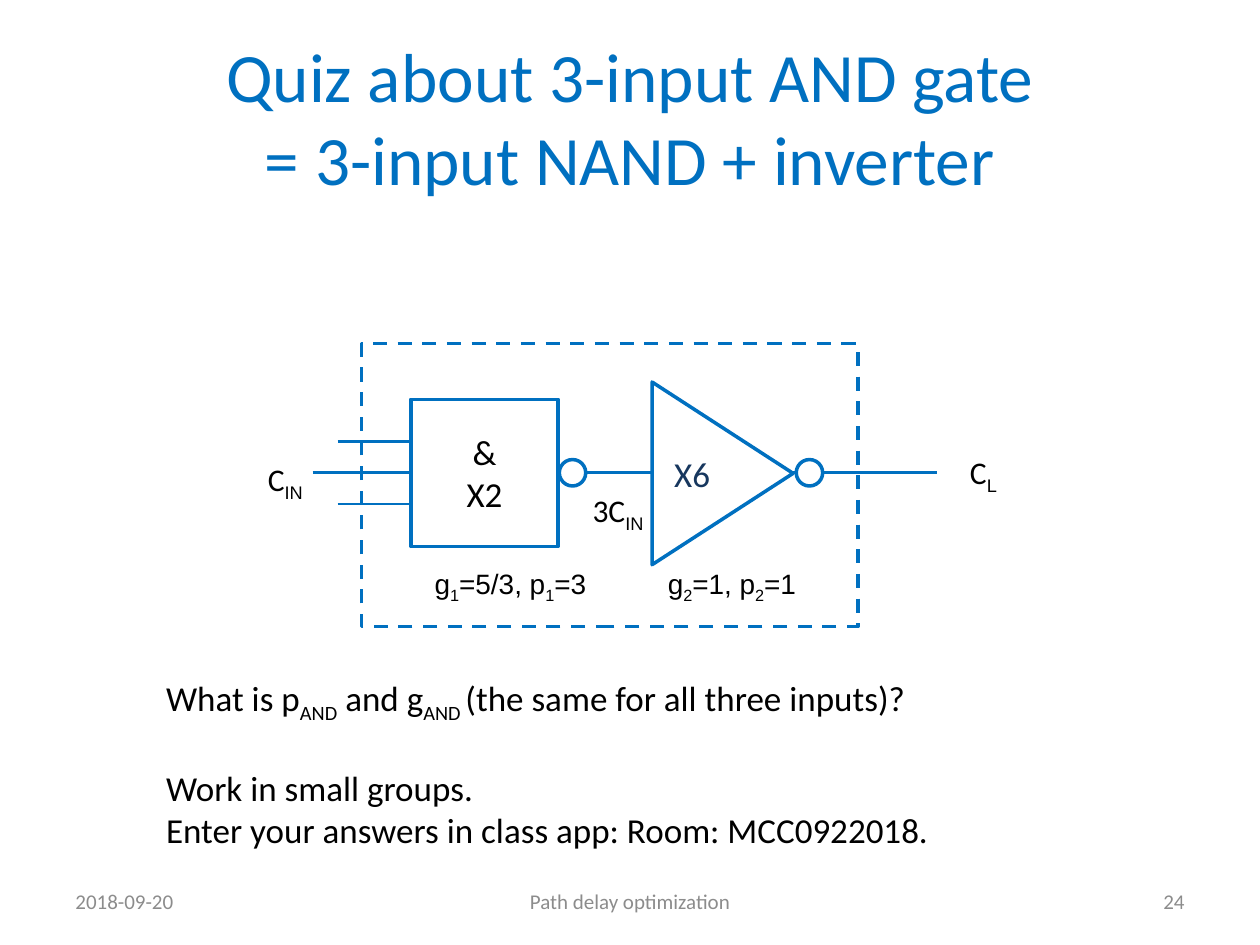
"""Build the quiz slide about a 3-input AND gate."""
from lxml.etree import SubElement
from pptx import Presentation
from pptx.dml.color import RGBColor
from pptx.enum.dml import MSO_LINE_DASH_STYLE as Dash
from pptx.enum.shapes import MSO_CONNECTOR as Connector, MSO_SHAPE as Shape
from pptx.enum.text import MSO_ANCHOR as Anchor, PP_ALIGN as Align
from pptx.oxml.ns import qn
from pptx.util import Pt

COLORS = {"blue": "0070C0", "navy": "17375E", "gray": "8C8C8C", "black": "000000", "white": "FFFFFF"}


def write(shape, lines, size, color="black", align=Align.LEFT, anchor=Anchor.TOP,
          font="Calibri", subscript_font=None, wrap=True):
    """Fill a shape with lines in which text between underscores is subscript."""
    frame = shape.text_frame
    frame.word_wrap = wrap
    frame.vertical_anchor = anchor
    frame.text = "\n".join(lines)
    for paragraph in frame.paragraphs:
        pieces = paragraph.text.split("_")
        paragraph.text = pieces[0]
        paragraph.alignment = align
        for piece in pieces[1:]:
            paragraph.add_run().text = piece
        for index, run in enumerate(paragraph.runs):
            is_subscript = index % 2 == 1
            run.font.size = Pt(size)
            run.font.name = subscript_font if is_subscript and subscript_font else font
            run.font.color.rgb = RGBColor.from_string(COLORS[color])
            if is_subscript:
                run.font._element.set("baseline", "-25000")


def add_outlined(kind, left, top, width, height):
    """Add a white shape with a blue outline."""
    shape = slide.shapes.add_shape(kind, Pt(left), Pt(top), Pt(width), Pt(height))
    shape.shadow.inherit = False
    shape.fill.solid()
    shape.fill.fore_color.rgb = RGBColor.from_string(COLORS["white"])
    shape.line.color.rgb = RGBColor.from_string(COLORS["blue"])
    shape.line.width = Pt(2)
    return shape


presentation = Presentation()
presentation.slide_width, presentation.slide_height = Pt(720), Pt(540)
slide = presentation.slides.add_slide(presentation.slide_layouts[6])

title = slide.shapes.add_textbox(Pt(36), Pt(21.6), Pt(648), Pt(90))
write(title, ["Quiz about 3-input AND gate", "= 3-input NAND + inverter"], 39.6, "blue",
      Align.CENTER, Anchor.MIDDLE)

for text, left, width, align in [
    ("2018-09-20", 36, 168, Align.LEFT),
    ("Path delay optimization", 246, 228, Align.CENTER),
    ("24", 516, 168, Align.RIGHT),
]:
    footer = slide.shapes.add_textbox(Pt(left), Pt(500.4), Pt(width), Pt(28.8))
    write(footer, [text], 12, "gray", align, Anchor.MIDDLE)

for start, end, y, weight in [(178.6, 535.6, 270, 2.25), (193, 269, 288, 1.5), (193, 269, 252.4, 1.5)]:
    wire = slide.shapes.add_connector(Connector.STRAIGHT, Pt(start), Pt(y), Pt(end), Pt(y))
    wire.line.color.rgb = RGBColor.from_string(COLORS["blue"])
    wire.line.width = Pt(weight)
    SubElement(wire._element.spPr, qn("a:effectLst"))

nand_gate = add_outlined(Shape.RECTANGLE, 234.8, 228.2, 84.2, 84.2)
write(nand_gate, ["&", "X2"], 20, align=Align.CENTER, anchor=Anchor.MIDDLE)

inverter = add_outlined(Shape.ISOSCELES_TRIANGLE, 360.7, 230.2, 104.4, 80.6)
inverter.rotation = 90
write(inverter, ["X6"], 20, "navy", Align.RIGHT, Anchor.MIDDLE)
inverter.text_frame._txBody.bodyPr.set("vert", "vert270")

for left in (319.6, 455):
    add_outlined(Shape.OVAL, left, 262.6, 15.1, 15.1)

and_gate = add_outlined(Shape.RECTANGLE, 206.6, 196.4, 283.6, 161.6)
and_gate.fill.background()
and_gate.line.dash_style = Dash.DASH

for text, left, width in [("g_1_=5/3, p_1_=3", 248.4, 89.2), ("g_2_=1, p_2_=1", 381.6, 75.6)]:
    effort = slide.shapes.add_textbox(Pt(left), Pt(324), Pt(width), Pt(19.4))
    frame = effort.text_frame
    frame.margin_left = frame.margin_right = frame.margin_top = frame.margin_bottom = 0
    write(effort, [text], 16, font="Arial", wrap=False)

for text, left, top, width in [
    ("C_L", 546.5, 255.6, 31),
    ("C_IN", 144.7, 259.2, 36.7),
    ("3C_IN", 330.5, 277.2, 45.4),
]:
    capacitance = slide.shapes.add_textbox(Pt(left), Pt(top), Pt(width), Pt(28.8))
    write(capacitance, [text], 18, align=Align.CENTER, subscript_font="Arial", wrap=False)

question = slide.shapes.add_textbox(Pt(87.8), Pt(383), Pt(550), Pt(104.4))
write(question, [
    "What is p_AND_ and g_AND _(the same for all three inputs)?",
    "Work in small groups.",
    "Enter your answers in class app: Room: MCC0922018.",
], 20)
question.text_frame.paragraphs[1].space_before = Pt(24.4)

presentation.save("out.pptx")
